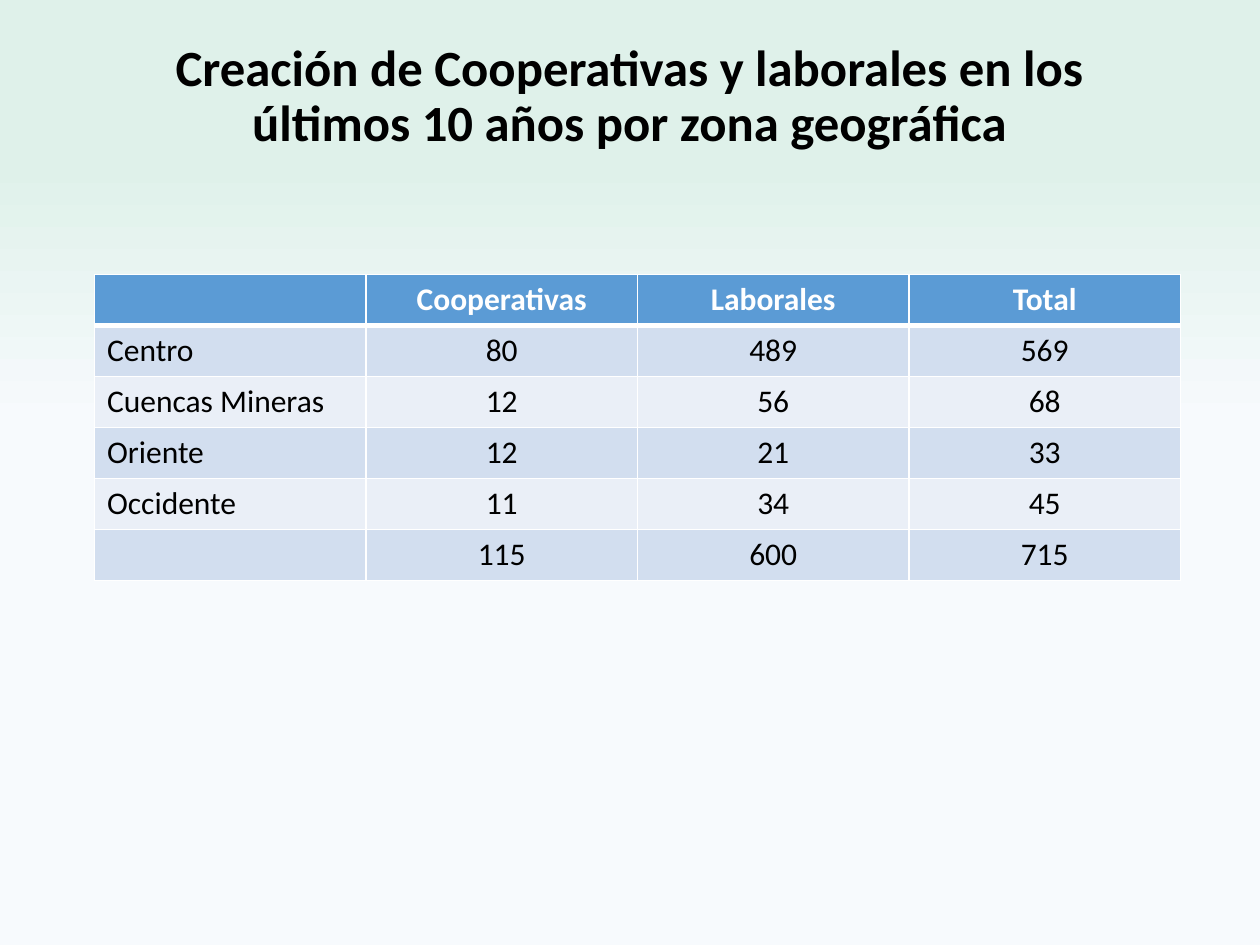
import dataclasses

import lxml.etree
import pptx
import pptx.dml.color
import pptx.enum.text
import pptx.oxml.ns
import pptx.util

Inches = pptx.util.Inches
Pt = pptx.util.Pt
ALIGN = pptx.enum.text.PP_ALIGN
qn = pptx.oxml.ns.qn


@dataclasses.dataclass(frozen=True)
class Theme:
    font: str = "Calibri"
    head: int = 29
    body: int = 18
    ink: str = "000000"
    white: str = "FFFFFF"
    blue: str = "5B9BD5"
    bands: tuple = ("D2DEEF", "EAEFF7")
    sky: str = "F7FAFD"
    mint: str = "DFF1EA"


THEME = Theme()
TITLE = "Creación de Cooperativas y laborales en los últimos 10 años por zona geográfica"
ROWS = [
    ("", "Cooperativas", "Laborales", "Total"),
    ("Centro", "80", "489", "569"),
    ("Cuencas Mineras", "12", "56", "68"),
    ("Oriente", "12", "21", "33"),
    ("Occidente", "11", "34", "45"),
    ("", "115", "600", "715"),
]


def color(code):
    return pptx.dml.color.RGBColor.from_string(code)


def write(frame, text, size=THEME.body, ink=THEME.ink, bold=False,
          align=ALIGN.LEFT, space=None):
    para = frame.paragraphs[0]
    para.alignment = align
    para.line_spacing = space
    if text:
        run = para.add_run()
        run.text = text
        font = run.font
        font.name, font.size, font.bold = THEME.font, Pt(size), bold
        font.color.rgb = color(ink)


def add_tag(parent, name, **attrs):
    return lxml.etree.SubElement(parent, qn(name), attrs)


def paint_back(slide):
    """Fill the background with a gradient running from the bottom up."""
    fill = slide.background.fill
    fill.gradient()
    fill.gradient_angle = 90
    stops = next(slide.element.iter(qn("a:gsLst")))
    for stop in list(stops):
        stops.remove(stop)
    for pos, code, alpha in [(55, THEME.sky, 100), (83, THEME.mint, 75),
                             (92, THEME.mint, 100), (100, THEME.mint, 100)]:
        stop = add_tag(stops, "a:gs", pos=str(pos * 1000))
        tint = add_tag(stop, "a:srgbClr", val=code)
        if alpha < 100:
            add_tag(tint, "a:alpha", val=str(alpha * 1000))


def add_title(slide, left, top, width, height):
    frame = slide.shapes.add_textbox(left, top, width, height).text_frame
    frame.word_wrap = True
    frame.vertical_anchor = pptx.enum.text.MSO_ANCHOR.MIDDLE
    write(frame, TITLE, size=THEME.head, bold=True, align=ALIGN.CENTER, space=0.9)


def add_edges(cell, top=1, bottom=1):
    """Draw white borders; call before the cell's fill is set."""
    props = cell._tc.get_or_add_tcPr()
    for side, width in zip("LRTB", (1, 1, top, bottom)):
        line = add_tag(props, f"a:ln{side}", w=str(Pt(width)))
        add_tag(add_tag(line, "a:solidFill"), "a:srgbClr", val=THEME.white)


def add_grid(slide, left, top, width, height):
    count = len(ROWS[0])
    table = slide.shapes.add_table(len(ROWS), count, left, top, width, height).table
    for r, row in enumerate(ROWS):
        head = r == 0
        for c, text in enumerate(row):
            cell = table.cell(r, c)
            add_edges(cell, top=3 if r == 1 else 1, bottom=3 if head else 1)
            cell.fill.solid()
            cell.fill.fore_color.rgb = color(THEME.blue if head else THEME.bands[(r - 1) % 2])
            write(cell.text_frame, text, bold=head,
                  ink=THEME.white if head else THEME.ink,
                  align=ALIGN.CENTER if c else ALIGN.LEFT)


def main():
    deck = pptx.Presentation()
    deck.slide_width, deck.slide_height = Inches(10), Inches(7.5)
    slide = deck.slides.add_slide(deck.slide_layouts[6])
    paint_back(slide)
    add_title(slide, Inches(0.69), Inches(0.4), Inches(8.62), Inches(0.75))
    add_grid(slide, Inches(0.75), Inches(2.18), Inches(8.62), Inches(2.43))
    deck.save("out.pptx")


if __name__ == "__main__":
    main()
